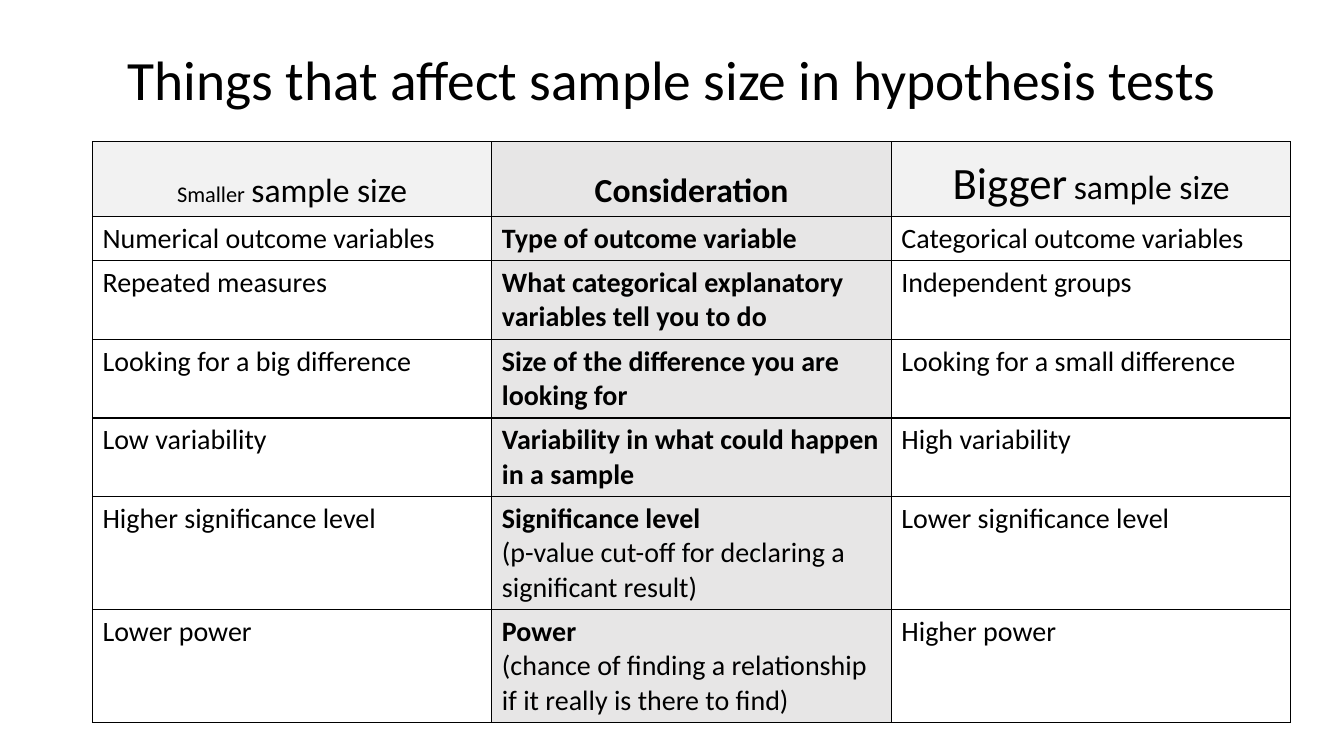
from dataclasses import dataclass

from lxml.etree import SubElement
from pptx import Presentation
from pptx.dml.color import RGBColor
from pptx.enum.text import MSO_ANCHOR as Anchor, MSO_AUTO_SIZE as AutoSize, PP_ALIGN as Align
from pptx.oxml import parse_xml
from pptx.oxml.ns import nsdecls, qn
from pptx.util import Cm, Pt


@dataclass(frozen=True)
class Theme:
    font: str = "Calibri"
    ink: str = "000000"
    header_fill: str = "F2F2F2"
    middle_fill: str = "E7E6E6"
    title_size: float = 39.6
    big_size: int = 32
    header_size: int = 24
    body_size: int = 20
    small_size: int = 16
    border: float = 1


THEME = Theme()
TITLE = "Things that affect sample size in hypothesis tests"

# Each header is a list of (text, size, bold) runs.
HEADERS = [
    [("Smaller", THEME.small_size, False), (" ", THEME.body_size, False),
     ("sample size", THEME.header_size, False)],
    [("Consideration", THEME.header_size, True)],
    [("Bigger", THEME.big_size, False), (" ", THEME.body_size, False),
     ("sample size", THEME.header_size, False)],
]

# Smaller sample, consideration, explanation, bigger sample, lines of text.
CONSIDERATIONS = [
    ("Numerical outcome variables", "Type of outcome variable", "",
     "Categorical outcome variables", 1),
    ("Repeated measures", "What categorical explanatory variables tell you to do", "",
     "Independent groups", 2),
    ("Looking for a big difference", "Size of the difference you are looking for", "",
     "Looking for a small difference", 2),
    ("Low variability", "Variability in what could happen in a sample", "",
     "High variability", 2),
    ("Higher significance level", "Significance level ",
     "(p-value cut-off for declaring a significant result)",
     "Lower significance level", 3),
    ("Lower power", "Power ",
     "(chance of finding a relationship if it really is there to find)",
     "Higher power", 3),
]


def add_run(paragraph, text, size, bold=False):
    run = paragraph.add_run()
    run.text = text
    run.font.name = THEME.font
    run.font.size = Pt(size)
    run.font.bold = bold
    run.font.color.rgb = RGBColor.from_string(THEME.ink)


def style_cell(cell, fill=None):
    """Fill the cell, or leave it clear, and draw its four borders."""
    if fill:
        cell.fill.solid()
        cell.fill.fore_color.rgb = RGBColor.from_string(fill)
    else:
        cell.fill.background()
    properties = cell._tc.get_or_add_tcPr()
    for index, side in enumerate(("lnL", "lnR", "lnT", "lnB")):
        line = parse_xml(f'<a:{side} {nsdecls("a")} w="{Pt(THEME.border)}"/>')
        solid = SubElement(line, qn("a:solidFill"))
        SubElement(solid, qn("a:srgbClr"), val=THEME.ink)
        properties.insert(index, line)


def add_title(slide, left, top, width, height):
    title = slide.shapes.title
    title.left, title.top, title.width, title.height = left, top, width, height
    frame = title.text_frame
    frame.word_wrap = True
    frame.auto_size = AutoSize.NONE
    frame.vertical_anchor = Anchor.MIDDLE
    paragraph = frame.paragraphs[0]
    paragraph.alignment = Align.CENTER
    paragraph.line_spacing = 0.9
    add_run(paragraph, TITLE, THEME.title_size)


def fill_header(row):
    for column, (cell, runs) in enumerate(zip(row.cells, HEADERS)):
        style_cell(cell, THEME.middle_fill if column == 1 else THEME.header_fill)
        cell.vertical_anchor = Anchor.BOTTOM
        paragraph = cell.text_frame.paragraphs[0]
        paragraph.alignment = Align.CENTER
        for text, size, bold in runs:
            add_run(paragraph, text, size, bold)


def fill_consideration(row, smaller, consideration, explanation, bigger):
    for column, (cell, text) in enumerate(zip(row.cells, (smaller, consideration, bigger))):
        middle = column == 1
        style_cell(cell, THEME.middle_fill if middle else None)
        paragraph = cell.text_frame.paragraphs[0]
        add_run(paragraph, text, THEME.body_size, middle)
        if middle and explanation:
            paragraph.add_line_break()
            add_run(paragraph, explanation, THEME.body_size)


def add_comparison_table(slide, left, top, width):
    """Place the table; each row is as tall as its lines of text need."""
    heights = [Cm(1.88)] + [Cm(0.25 + 0.86 * entry[-1]) for entry in CONSIDERATIONS]
    table = slide.shapes.add_table(
        len(heights), len(HEADERS), left, top, width, sum(heights)).table
    table.first_row = False
    table.horz_banding = False
    for row, height in zip(table.rows, heights):
        row.height = height
    header, *body = table.rows
    fill_header(header)
    for row, (*texts, _) in zip(body, CONSIDERATIONS):
        fill_consideration(row, *texts)


def main():
    presentation = Presentation()
    presentation.slide_width = Cm(33.87)
    presentation.slide_height = Cm(19.05)
    slide = presentation.slides.add_slide(presentation.slide_layouts[5])
    left = Cm(2.33)
    add_title(slide, left, Cm(1.01), Cm(29.21), Cm(2.13))
    add_comparison_table(slide, left, Cm(3.57), Cm(30.2))
    presentation.save("out.pptx")


if __name__ == "__main__":
    main()
